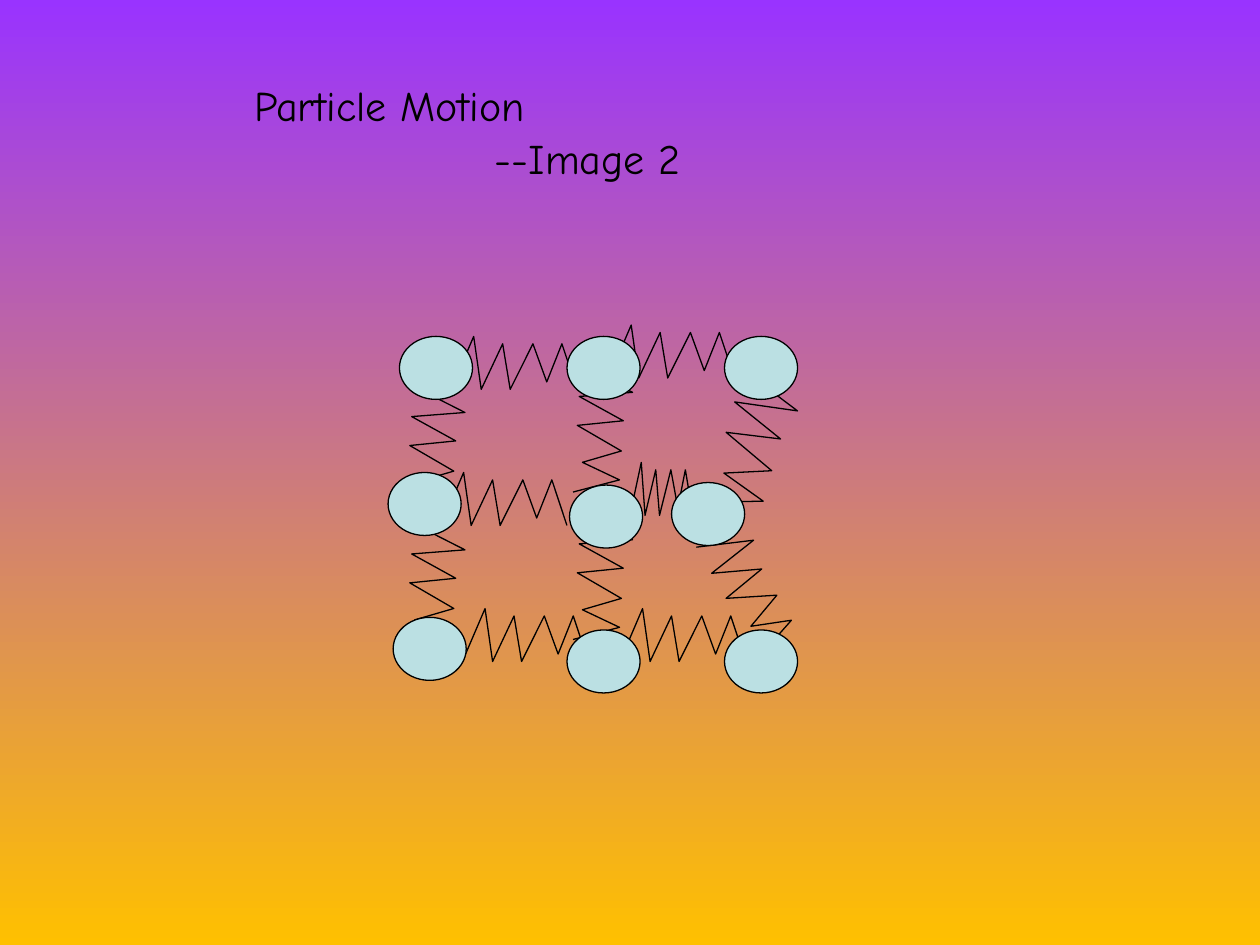
from pptx import Presentation
from pptx import util as u
from pptx.dml.color import RGBColor
from pptx.enum import text

FONT = "Comic Neue"
INK, PARTICLE = "000000", "BBE0E3"
SKY = ["9933FF", "FFC000"]

HEADING = ("Particle Motion", (1.92, 0.58, 5.42, 0.5))
SUBHEADING = ("--Image 2", (3.83, 1, 3.17, 0.5))

# Zigzag of one spring, as shares of its width and height
ZIGZAG = [(0, 1), (0.18, 0), (0.24, 1), (0.41, 0.14), (0.47, 1),
          (0.65, 0.14), (0.76, 0.86), (0.88, 0.14), (1, 1)]

# left, top, width, height, rotation
COIL = (1, 0.42)
SPRINGS = [
    (3.58, 2.67, *COIL, 0), (4.83, 2.58, *COIL, 0),
    (3.5, 3.75, *COIL, 0), (5, 3.67, 0.5, 0.42, 0),
    (3.67, 4.83, *COIL, 0), (4.92, 4.83, *COIL, 0),
    (2.96, 3.37, *COIL, 93.7), (4.29, 3.21, *COIL, 93.7),
    (5.45, 3.28, 1.09, 0.5, 105.6),
    (2.96, 4.46, *COIL, 93.7), (4.29, 4.38, *COIL, 93.7),
    (5.46, 4.46, *COIL, 59.9),
]

PARTICLE_SIZE = (0.58, 0.5)
PARTICLES = [
    (3.17, 2.67), (4.5, 2.67), (5.75, 2.67),
    (3.08, 3.75), (4.52, 3.85), (5.33, 3.83),
    (3.12, 4.9), (4.5, 5), (5.75, 5),
]


def rgb(value):
    return RGBColor.from_string(value)


def inches(*lengths):
    return [u.Inches(length) for length in lengths]


def outline(shape):
    shape.shadow.inherit = False
    shape.line.color.rgb = rgb(INK)
    shape.line.width = u.Pt(0.75)


def write(box, wording):
    frame = box.text_frame
    frame.word_wrap = True
    frame.auto_size = text.MSO_AUTO_SIZE.SHAPE_TO_FIT_TEXT
    frame.vertical_anchor = text.MSO_ANCHOR.TOP
    frame.text = wording
    line = frame.paragraphs[0]
    line.alignment = text.PP_ALIGN.LEFT
    line.space_before = u.Pt(0)
    font = line.runs[0].font
    font.name, font.size = FONT, u.Pt(24)
    font.color.rgb = rgb(INK)


def add_spring(shapes, left, top, width, height, rotation):
    points = [inches(left + x * width, top + y * height) for x, y in ZIGZAG]
    builder = shapes.build_freeform(*points[0])
    builder.add_line_segments(points[1:], close=False)
    spring = builder.convert_to_shape()
    spring.rotation = rotation
    spring.fill.background()
    outline(spring)


def add_particle(shapes, left, top):
    particle = shapes.add_shape(MSO_SHAPE.OVAL, *inches(left, top, *PARTICLE_SIZE))
    particle.fill.solid()
    particle.fill.fore_color.rgb = rgb(PARTICLE)
    outline(particle)


def main():
    prs = Presentation()
    prs.slide_width, prs.slide_height = inches(10, 7.5)
    slide = prs.slides.add_slide(prs.slide_layouts.get_by_name("Title Only"))

    sky = slide.background.fill
    sky.gradient()
    sky.gradient_angle = 270
    for position, (stop, colour) in enumerate(zip(sky.gradient_stops, SKY)):
        stop.position = position
        stop.color.rgb = rgb(colour)

    for spring in SPRINGS:
        add_spring(slide.shapes, *spring)
    for particle in PARTICLES:
        add_particle(slide.shapes, *particle)

    wording, place = SUBHEADING
    write(slide.shapes.add_textbox(*inches(*place)), wording)
    wording, place = HEADING
    title = slide.shapes.title
    title.left, title.top, title.width, title.height = inches(*place)
    write(title, wording)

    prs.save("out.pptx")


from pptx.enum.shapes import MSO_SHAPE

if __name__ == "__main__":
    main()
